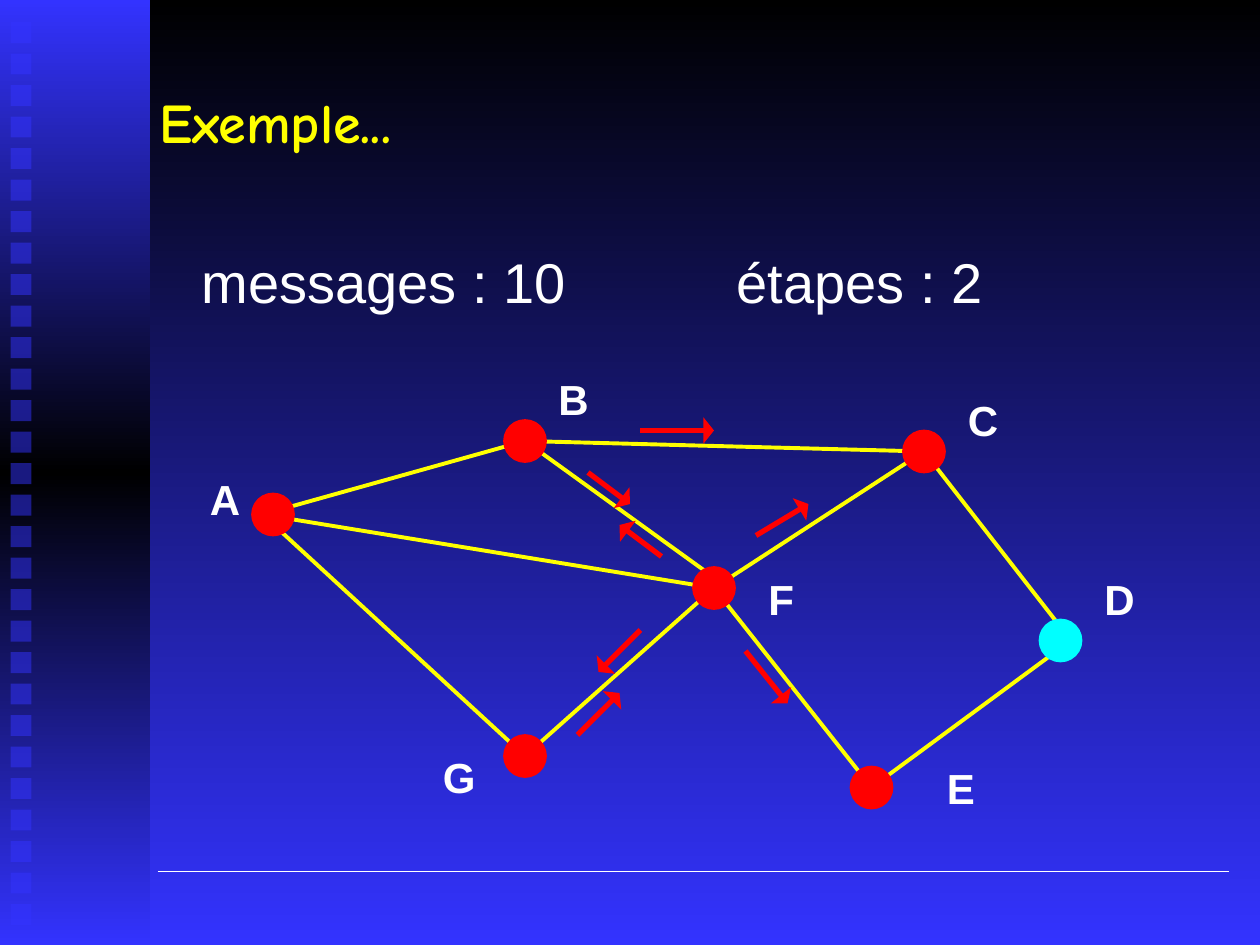
from copy import deepcopy
from dataclasses import dataclass

from lxml import etree
from pptx import Presentation
from pptx.dml.color import RGBColor
from pptx.enum.shapes import MSO_CONNECTOR, MSO_SHAPE
from pptx.enum.text import MSO_ANCHOR
from pptx.oxml.ns import qn
from pptx.util import Inches, Pt

LINE = MSO_CONNECTOR.STRAIGHT
RECT = MSO_SHAPE.RECTANGLE
OVAL = MSO_SHAPE.OVAL
TOP = MSO_ANCHOR.TOP
MIDDLE = MSO_ANCHOR.MIDDLE


@dataclass(frozen=True)
class Theme:
    black: str = "000000"
    blue: str = "3333FF"
    white: str = "FFFFFF"
    yellow: str = "FFFF00"
    red: str = "FF0000"
    cyan: str = "00FFFF"
    body: str = "Arial"
    head: str = "Comic Neue"
    large: int = 32
    small: int = 24
    thin: float = 1
    edge: float = 2.25
    arrow: float = 3


THEME = Theme()
COLS, ROWS = 120, 90
CELL = 1 / 12

NODES = {
    "A": (8, 14, -1, 0.8, 9.5),
    "B": (32, 7, 0, 34, 0),
    "G": (32, 37, 0, 23, 36),
    "F": (50, 21, 0, 54, 19),
    "E": (65, 40, 0, 71, 37),
    "D": (83, 26, 1, 86, 19),
    "C": (70, 8, 0, 73, 2),
}
EDGES = ["AB", "BF", "FG", "GA", "AF", "FC", "CD", "DE", "EF", "BC"]
LIFT = {"BF": -1}
FRESH = "D"
ARROWS = [
    (43, 6, 50, 6), (38, 10, 42, 13), (45, 18, 41, 15), (54, 16, 59, 13),
    (53, 27, 57, 32), (43, 25, 39, 29), (37, 35, 41, 31),
]


def cells(*counts):
    return [Inches(count * CELL) for count in counts]


def shade(fill, colors):
    fill.gradient()
    fill.gradient_angle = 270
    stops = fill.gradient_stops
    if len(colors) > len(stops):
        last = stops[1]._gs
        last.addprevious(deepcopy(last))
    for i, (stop, color) in enumerate(zip(fill.gradient_stops, colors)):
        stop.color.rgb = RGBColor.from_string(color)
        stop.position = i / (len(colors) - 1)


def add_form(slide, kind, box, color=None):
    form = slide.shapes.add_shape(kind, *cells(*box))
    form.shadow.inherit = False
    form.line.fill.background()
    if color:
        form.fill.solid()
        form.fill.fore_color.rgb = RGBColor.from_string(color)
    return form


def add_line(slide, ends, color, width, head=False):
    line = slide.shapes.add_connector(LINE, *cells(*ends))
    line.line.color.rgb = RGBColor.from_string(color)
    line.line.width = Pt(width)
    props = line._element.spPr
    if head:
        etree.SubElement(props.find(qn("a:ln")), qn("a:tailEnd"),
                         type="triangle", w="lg", len="sm")
    etree.SubElement(props, qn("a:effectLst"))


def add_text(slide, box, text, size, color, font=THEME.body, bold=False,
             anchor=TOP, wrap=True, before=0):
    frame = slide.shapes.add_textbox(*cells(*box)).text_frame
    frame.word_wrap = wrap
    frame.vertical_anchor = anchor
    frame.text = text
    line = frame.paragraphs[0]
    line.space_before = Pt(before)
    style = line.runs[0].font
    style.name = font
    style.size = Pt(size)
    style.bold = bold
    style.color.rgb = RGBColor.from_string(color)


def add_band(slide, box):
    left, top = box[:2]
    band = add_form(slide, RECT, box)
    shade(band.fill, [THEME.blue, THEME.black, THEME.blue])
    for i in range(29):
        tile = add_form(slide, RECT, (left + 1, top + 2.1 + 3 * i, 2, 2), THEME.blue)
        tint = tile._element.spPr.find(qn("a:solidFill"))[0]
        etree.SubElement(tint, qn("a:alpha"), val="50000")


def add_title(slide, box):
    add_text(slide, box, "Exemple...", THEME.large, THEME.yellow,
             THEME.head, True, MIDDLE)


def add_counts(slide, box):
    left, top, width, height = box
    for i, text in enumerate(["messages : 10", "étapes : 2"]):
        spot = (left + i * (width - 41), top, 41, height)
        add_text(slide, spot, text, THEME.large, THEME.white, before=3)


def add_graph(slide, box):
    left, top = box[:2]

    def end(name):
        x, y, shift = NODES[name][:3]
        return left + x + shift, top + y

    for edge in EDGES:
        start, (x, y) = end(edge[0]), end(edge[1])
        add_line(slide, (*start, x, y + LIFT.get(edge, 0)), THEME.yellow, THEME.edge)
    for name, (x, y, _, _, _) in NODES.items():
        color = THEME.cyan if name == FRESH else THEME.red
        dot = add_form(slide, OVAL, (left + x - 2, top + y - 2, 4, 4), color)
        dot.line.color.rgb = RGBColor.from_string(color)
        dot.line.width = Pt(THEME.thin)
    for name, (_, _, _, x, y) in NODES.items():
        add_text(slide, (left + x, top + y, 5.2, 6), name, THEME.small,
                 THEME.white, bold=True, wrap=False)
    for x1, y1, x2, y2 in ARROWS:
        add_line(slide, (left + x1, top + y1, left + x2, top + y2),
                 THEME.red, THEME.arrow, True)


def main():
    deck = Presentation()
    deck.slide_width, deck.slide_height = cells(COLS, ROWS)
    slide = deck.slides.add_slide(deck.slide_layouts[6])
    shade(slide.background.fill, [THEME.black, THEME.blue])
    add_band(slide, (0, 0, 14.3, ROWS))
    add_line(slide, (15, 83, 117, 83), THEME.white, THEME.thin)
    add_title(slide, (14, 4, 102, 15))
    add_counts(slide, (18, 23, 92, 8))
    add_graph(slide, (18, 35, 92, 42))
    deck.save("out.pptx")


if __name__ == "__main__":
    main()
